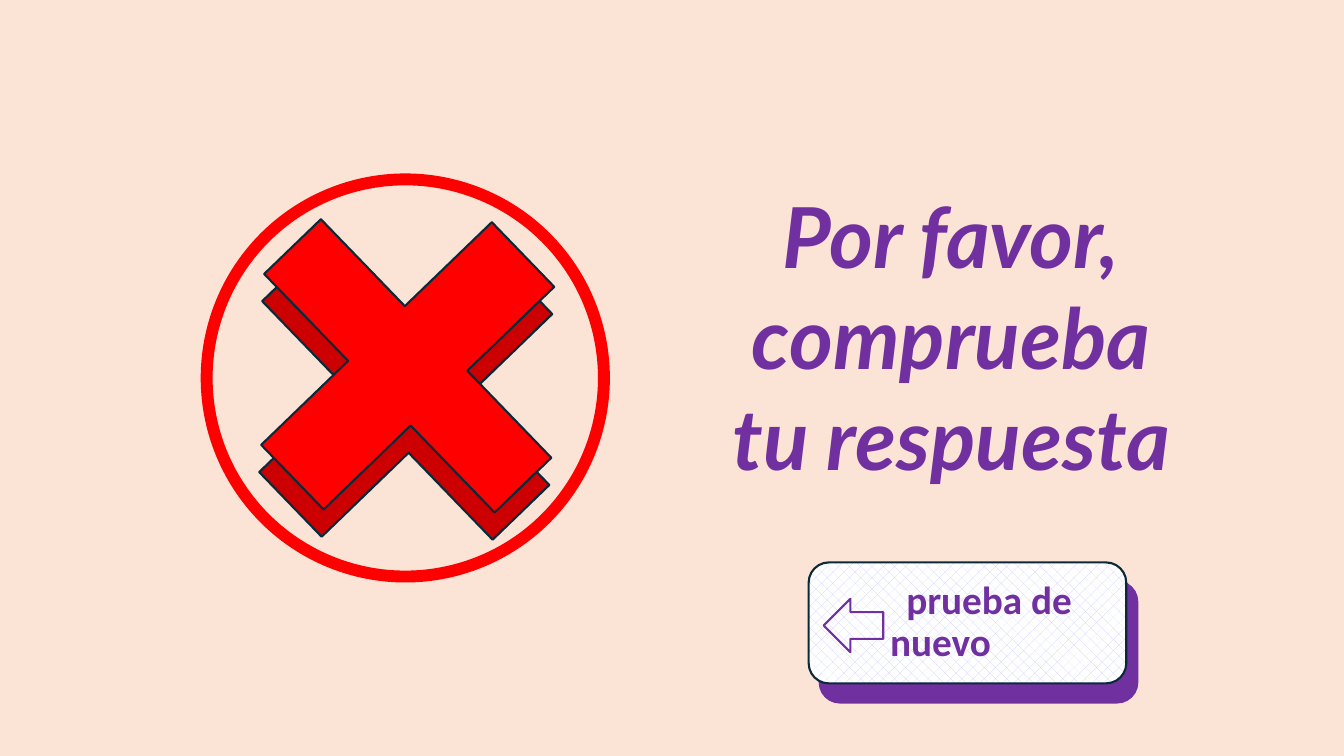
from lxml import etree
from pptx import Presentation
from pptx.dml.color import RGBColor
from pptx.enum.dml import MSO_PATTERN
from pptx.enum.shapes import MSO_SHAPE as SHAPE
from pptx.enum.text import MSO_ANCHOR as ANCHOR, MSO_AUTO_SIZE as AUTO, PP_ALIGN as ALIGN
from pptx.oxml.ns import qn
from pptx.util import Inches, Pt

WIDTH, HEIGHT = Inches(13.33), Inches(7.5)
PEACH, PURPLE, RED, DARK_RED = "FBE3D6", "7030A0", "FF0000", "CC0000"
NAVY, LILAC, WHITE = "092A39", "CCCCFF", "FFFFFF"
TITLE_FONT = {"name": "Lato", "size": Pt(60), "bold": True, "italic": True}
BUTTON_FONT = {"name": "Calibri", "size": Pt(28), "bold": True}


def rgb(value):
    return RGBColor.from_string(value)


def share(x, y, w, h):
    return [int(v * side / 100) for v, side in zip((x, y, w, h), (WIDTH, HEIGHT) * 2)]


def apply(target, values):
    for name, value in values.items():
        setattr(target, name, value)


def add_run(p, text, font, color):
    r = p.add_run()
    r.text = text
    apply(r.font, font)
    r.font.color.rgb = rgb(color)
    return r


def outline_text(r, color):
    ln = etree.Element(qn("a:ln"), w=str(Pt(1)))
    fill = etree.SubElement(ln, qn("a:solidFill"))
    etree.SubElement(fill, qn("a:srgbClr"), val=color)
    r.font._element.insert(0, ln)


def add_title(s, lines, area):
    sp = s.shapes.title
    apply(sp, dict(zip(("left", "top", "width", "height"), share(*area))))
    tf = sp.text_frame
    apply(tf, {"word_wrap": False, "auto_size": AUTO.SHAPE_TO_FIT_TEXT,
               "vertical_anchor": ANCHOR.TOP})
    for i, line in enumerate(lines):
        p = tf.add_paragraph() if i else tf.paragraphs[0]
        p.alignment = ALIGN.CENTER
        outline_text(add_run(p, line, TITLE_FONT, PURPLE), PURPLE)


def add_figure(s, kind, area, line, fill=None, width=1.5):
    sp = s.shapes.add_shape(kind, *share(*area))
    sp.shadow.inherit = False
    sp.line.color.rgb = rgb(line)
    sp.line.width = Pt(width)
    if fill:
        sp.fill.solid()
        sp.fill.fore_color.rgb = rgb(fill)
    else:
        sp.fill.background()
    return sp


def add_cross(s, x, y, fill):
    sp = add_figure(s, SHAPE.CROSS, (x, y, 24.68, 42.4), NAVY, fill)
    sp.adjustments[0] = 0.377
    sp.rotation = 46


def add_button(s, text):
    size = (23.63, 16)
    add_figure(s, SHAPE.ROUNDED_RECTANGLE, (60.99, 76.93, *size), PURPLE, PURPLE)
    sp = add_figure(s, SHAPE.ROUNDED_RECTANGLE, (60.17, 74.4, *size), NAVY, WHITE)
    sp.fill.patterned()
    sp.fill.pattern = MSO_PATTERN.PERCENT_25
    sp.fill.fore_color.rgb = rgb(LILAC)
    sp.fill.back_color.rgb = rgb(WHITE)
    tf = sp.text_frame
    apply(tf, {"word_wrap": True, "vertical_anchor": ANCHOR.MIDDLE, "margin_left": Inches(0.75)})
    p = tf.paragraphs[0]
    apply(p, {"alignment": ALIGN.LEFT, "line_spacing": 0.9, "space_before": Pt(10)})
    p._p.get_or_add_pPr().set("indent", str(Inches(0.16)))
    add_run(p, text, BUTTON_FONT, PURPLE)
    add_figure(s, SHAPE.LEFT_ARROW, (61.29, 79.2, 4.43, 7.07), PURPLE)


def main():
    prs = Presentation()
    apply(prs, {"slide_width": WIDTH, "slide_height": HEIGHT})
    s = prs.slides.add_slide(prs.slide_layouts[5])
    s.background.fill.solid()
    s.background.fill.fore_color.rgb = rgb(PEACH)
    add_title(s, ("Por favor, ", "comprueba ", "tu respuesta "), (52.06, 23.73, 38.78, 41.73))
    add_figure(s, SHAPE.FLOWCHART_CONNECTOR, (15.38, 23.73, 29.56, 52.53), RED, width=8.5)
    add_cross(s, 17.85, 30.8, DARK_RED)
    add_cross(s, 18, 27.2, RED)
    add_button(s, "prueba de nuevo")
    prs.save("out.pptx")


if __name__ == "__main__":
    main()
